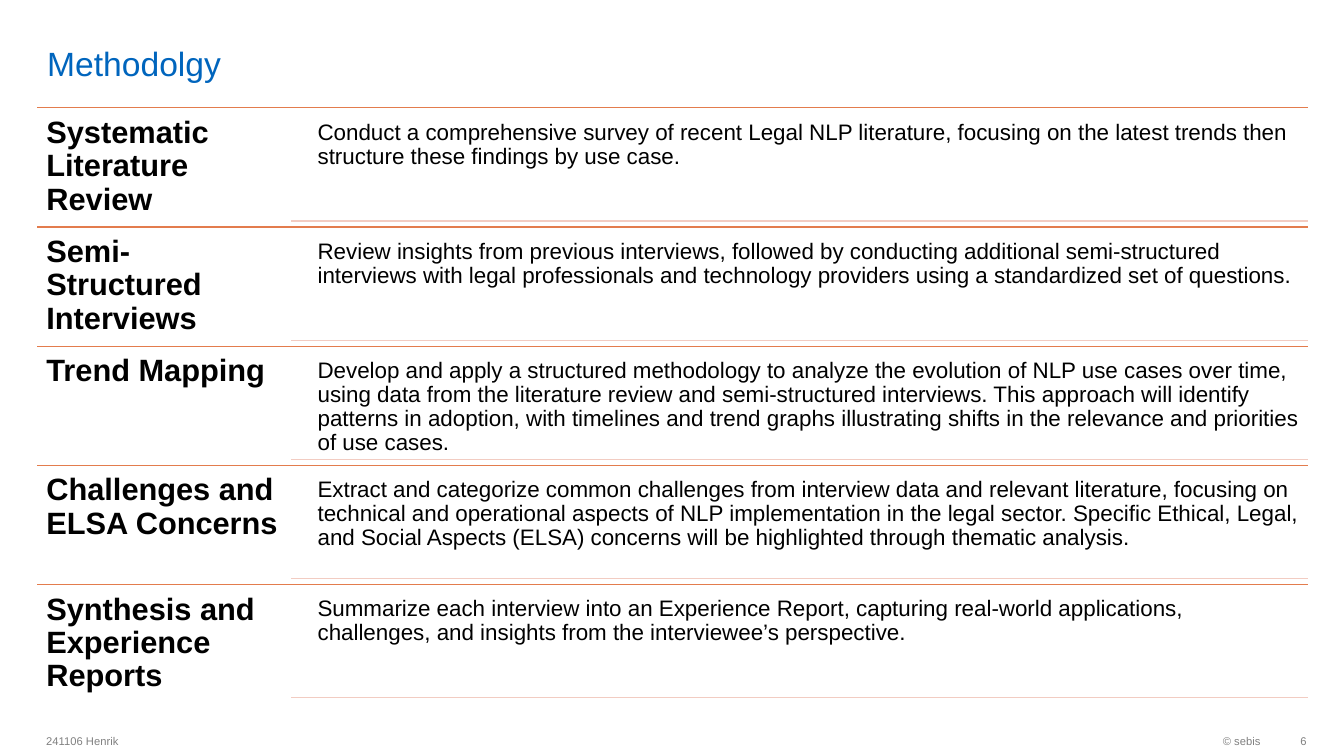
import lxml.etree
import pptx
import pptx.dml.color
import pptx.enum.shapes
import pptx.enum.text
import pptx.oxml.ns
import pptx.util

Inches = pptx.util.Inches
Pt = pptx.util.Pt
Align = pptx.enum.text.PP_ALIGN
Anchor = pptx.enum.text.MSO_ANCHOR

COLORS = {"title": "0065BD", "text": "000000", "foot": "808080",
          "rule": "E37C4D", "pale": "F2CCC2"}

STEPS = [
    ("Systematic Literature Review",
     "Conduct a comprehensive survey of recent Legal NLP literature, focusing on the "
     "latest trends then structure these findings by use case."),
    ("Semi-Structured Interviews",
     "Review insights from previous interviews, followed by conducting additional "
     "semi-structured interviews with legal professionals and technology providers "
     "using a standardized set of questions."),
    ("Trend Mapping",
     "Develop and apply a structured methodology to analyze the evolution of NLP use "
     "cases over time, using data from the literature review and semi-structured "
     "interviews. This approach will identify patterns in adoption, with timelines and "
     "trend graphs illustrating shifts in the relevance and priorities of use cases."),
    ("Challenges and ELSA Concerns",
     "Extract and categorize common challenges from interview data and relevant "
     "literature, focusing on technical and operational aspects of NLP implementation "
     "in the legal sector. Specific Ethical, Legal, and Social Aspects (ELSA) concerns "
     "will be highlighted through thematic analysis."),
    ("Synthesis and Experience Reports",
     "Summarize each interview into an Experience Report, capturing real-world "
     "applications, challenges, and insights from the interviewee’s perspective."),
]


def color(name):
    """Return the named colour."""
    return pptx.dml.color.RGBColor.from_string(COLORS[name])


def write(slide, text, box, size, tint="text", bold=False, align=Align.LEFT,
          anchor=Anchor.TOP, pad=(0.1, 0.05, 0.1, 0.05), lead=1.0):
    """Place one paragraph of text in a box."""
    frame = slide.shapes.add_textbox(*map(Inches, box)).text_frame
    frame.word_wrap = True
    frame.vertical_anchor = anchor
    (frame.margin_left, frame.margin_top,
     frame.margin_right, frame.margin_bottom) = map(Inches, pad)
    para = frame.paragraphs[0]
    para.alignment = align
    para.line_spacing = lead
    run = para.add_run()
    run.text = text
    run.font.name = "Arial"
    run.font.size = Pt(size)
    run.font.bold = bold
    run.font.color.rgb = color(tint)


def rule(slide, left, right, top, tint):
    """Draw a thin level line."""
    line = slide.shapes.add_connector(
        pptx.enum.shapes.MSO_CONNECTOR.STRAIGHT,
        Inches(left), Inches(top), Inches(right), Inches(top))
    line.line.color.rgb = color(tint)
    line.line.width = Pt(0.85)
    lxml.etree.SubElement(line._element.spPr, pptx.oxml.ns.qn("a:effectLst"))


def step(slide, box, name, detail):
    """Draw one step: a heading, its detail and two rules."""
    left, top, width, height = box
    side = width / 5
    gap = height / 20
    start = left + side + 0.19
    right = left + width
    rule(slide, left, right, top, "rule")
    write(slide, name, (left, top, side, height), 22, bold=True,
          pad=[0.09] * 4, lead=0.9)
    write(slide, detail, (start, top + gap, right - start, height - 2 * gap), 16,
          pad=[0.07] * 4, lead=0.9)
    rule(slide, left + side, right, top + height - gap, "pale")


def steps(slide, box):
    """Stack the steps evenly in the box."""
    left, top, width, height = box
    pitch = height / len(STEPS)
    for row, (name, detail) in enumerate(STEPS):
        step(slide, (left, top + row * pitch, width, pitch), name, detail)


def footer(slide, box):
    """Place the date and author, the owner and the page number."""
    left, top, width, height = box
    form = dict(size=8, tint="foot", anchor=Anchor.MIDDLE)
    page = left + width - 0.36
    write(slide, "241106 Henrik", (left, top, 6.3, height), **form)
    write(slide, "© sebis", (page - 2.34, top, 2.34, height), align=Align.RIGHT, **form)
    write(slide, "6", (page, top, 0.36, height), align=Align.RIGHT,
          pad=(0.1, 0.05, 0, 0.05), **form)


def main():
    """Build and save the slide."""
    deck = pptx.Presentation()
    deck.slide_width = Inches(13.33)
    deck.slide_height = Inches(7.5)
    slide = deck.slides.add_slide(deck.slide_layouts[6])
    write(slide, "Methodolgy", (0.37, 0.36, 2.13, 0.47), 24, tint="title",
          anchor=Anchor.BOTTOM, pad=(0.1, 0, 0.1, 0))
    steps(slide, (0.37, 1.07, 12.6, 5.91))
    footer(slide, (0.36, 7.19, 12.6, 0.32))
    deck.save("out.pptx")


if __name__ == "__main__":
    main()
